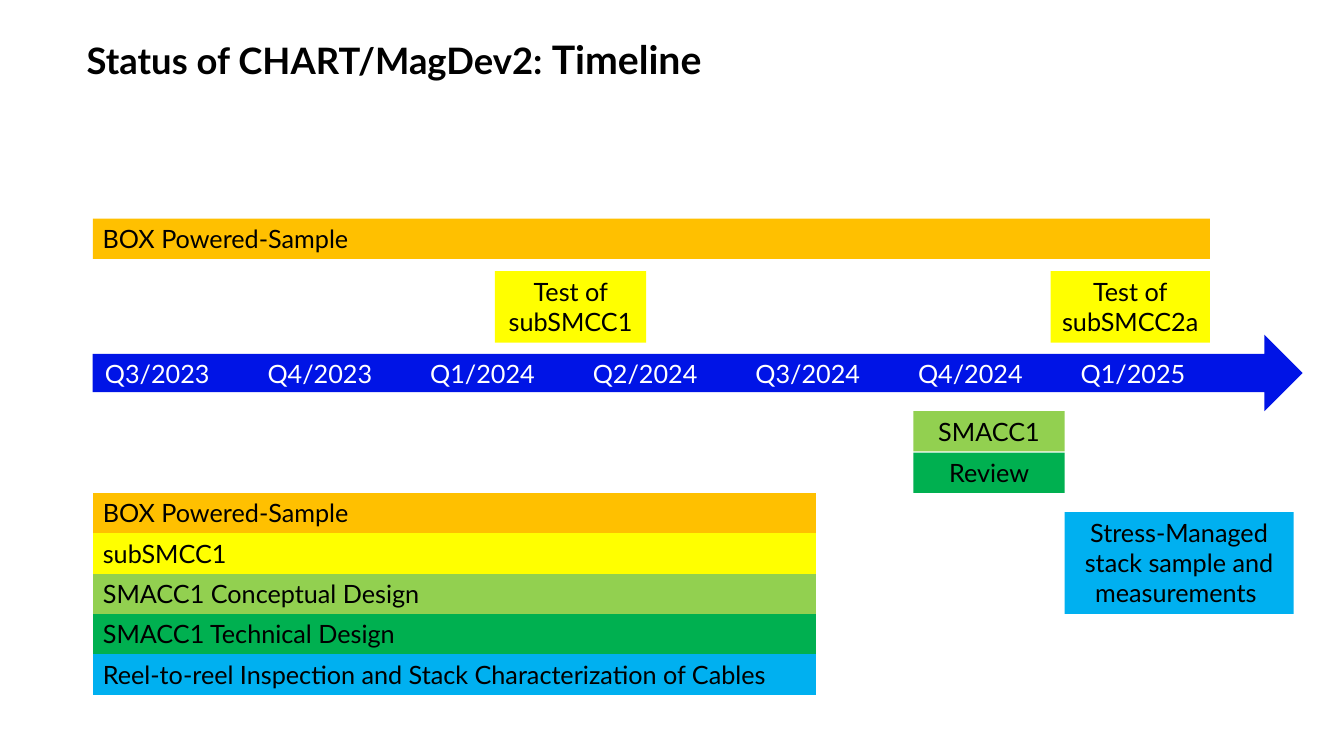
import pptx
import pptx.util
import pptx.dml.color
import pptx.enum.shapes
import pptx.enum.text
import lxml.etree

Inches = pptx.util.Inches
Shape = pptx.enum.shapes.MSO_SHAPE
Align = pptx.enum.text.PP_ALIGN
Anchor = pptx.enum.text.MSO_ANCHOR
Fit = pptx.enum.text.MSO_AUTO_SIZE

ORANGE, YELLOW, LIME = "FFC000", "FFFF00", "92D050"
GREEN, SKY, BLUE = "00B050", "00B0F0", "0014E6"


def paint(fill, color):
    fill.solid()
    fill.fore_color.rgb = pptx.dml.color.RGBColor.from_string(color)


def style(frame, color="000000", align=Align.LEFT, size=18):
    for para in frame.paragraphs:
        para.alignment = align
        for run in para.runs:
            run.font.name = "Lato"
            run.font.size = pptx.util.Pt(size)
            paint(run.font.fill, color)


deck = pptx.Presentation()
deck.slide_width = Inches(13.33)
deck.slide_height = Inches(7.5)
slide = deck.slides.add_slide(deck.slide_layouts[5])
shapes = slide.shapes

title = shapes.title
title.left, title.top = Inches(0.76), Inches(0.3)
title.width, title.height = Inches(9.8), Inches(0.89)
frame = title.text_frame
frame.auto_size = Fit.NONE
frame.vertical_anchor = Anchor.TOP
frame.text = "Status of CHART/MagDev2: "
last = frame.paragraphs[0].add_run()
last.text = "Timeline"
style(frame, size=26)
last.font.size = pptx.util.Pt(28)
for run in frame.paragraphs[0].runs:
    run.font.bold = True

arrow = shapes.add_shape(Shape.RIGHT_ARROW, Inches(0.92), Inches(3.32), Inches(12), Inches(0.76))
arrow.shadow.inherit = False
paint(arrow.fill, BLUE)
arrow.line.fill.background()

terms = ["Q3/2023", "Q4/2023", "Q1/2024", "Q2/2024", "Q3/2024", "Q4/2024", "Q1/2025"]
axis = shapes.add_textbox(Inches(1.04), Inches(3.55), Inches(11.29), Inches(0.3))
frame = axis.text_frame
frame.word_wrap = True
frame.margin_left = frame.margin_right = frame.margin_top = frame.margin_bottom = 0
frame.text = "\t".join(terms)
style(frame, "FFFFFF")
props = frame.paragraphs[0]._p.get_or_add_pPr()
space = "{http://schemas.openxmlformats.org/drawingml/2006/main}"
tabs = lxml.etree.SubElement(props, space + "tabLst")
for step in range(1, len(terms)):
    lxml.etree.SubElement(tabs, space + "tab", pos=str(Inches(1.613 * step)), algn="l")

blocks = [
    ("BOX Powered-Sample", 0.92, 2.17, 11.08, 0.4, ORANGE, Align.LEFT),
    ("Test of subSMCC1", 4.91, 2.69, 1.5, 0.71, YELLOW, Align.CENTER),
    ("Test of\nsubSMCC2a", 10.42, 2.69, 1.58, 0.71, YELLOW, Align.CENTER),
    ("SMACC1", 9.06, 4.08, 1.5, 0.4, LIME, Align.CENTER),
    ("Review", 9.06, 4.49, 1.5, 0.4, GREEN, Align.CENTER),
    ("Stress-Managed stack sample and measurements ", 10.56, 5.08, 2.27, 1.01, SKY, Align.CENTER),
]
for text, left, top, width, height, color, align in blocks:
    block = shapes.add_shape(Shape.RECTANGLE, Inches(left), Inches(top), Inches(width), Inches(height))
    block.shadow.inherit = False
    paint(block.fill, color)
    block.line.fill.background()
    frame = block.text_frame
    frame.word_wrap = True
    frame.vertical_anchor = Anchor.TOP
    frame.text = text
    style(frame, align=align)

tasks = [
    ("BOX Powered-Sample", ORANGE),
    ("subSMCC1", YELLOW),
    ("SMACC1 Conceptual Design", LIME),
    ("SMACC1 Technical Design", GREEN),
    ("Reel-to-reel Inspection and Stack Characterization of Cables", SKY),
]
table = shapes.add_table(len(tasks), 1, Inches(0.92), Inches(4.89), Inches(7.17), Inches(2)).table
table.first_row = False
table.horz_banding = False
table._tbl.tblPr[0].text = "{2D5ABB26-0587-4C30-8999-92F81FD0307C}"
for row, (text, color) in enumerate(tasks):
    cell = table.cell(row, 0)
    paint(cell.fill, color)
    cell.vertical_anchor = Anchor.MIDDLE
    cell.text_frame.text = text
    style(cell.text_frame)

deck.save("out.pptx")
